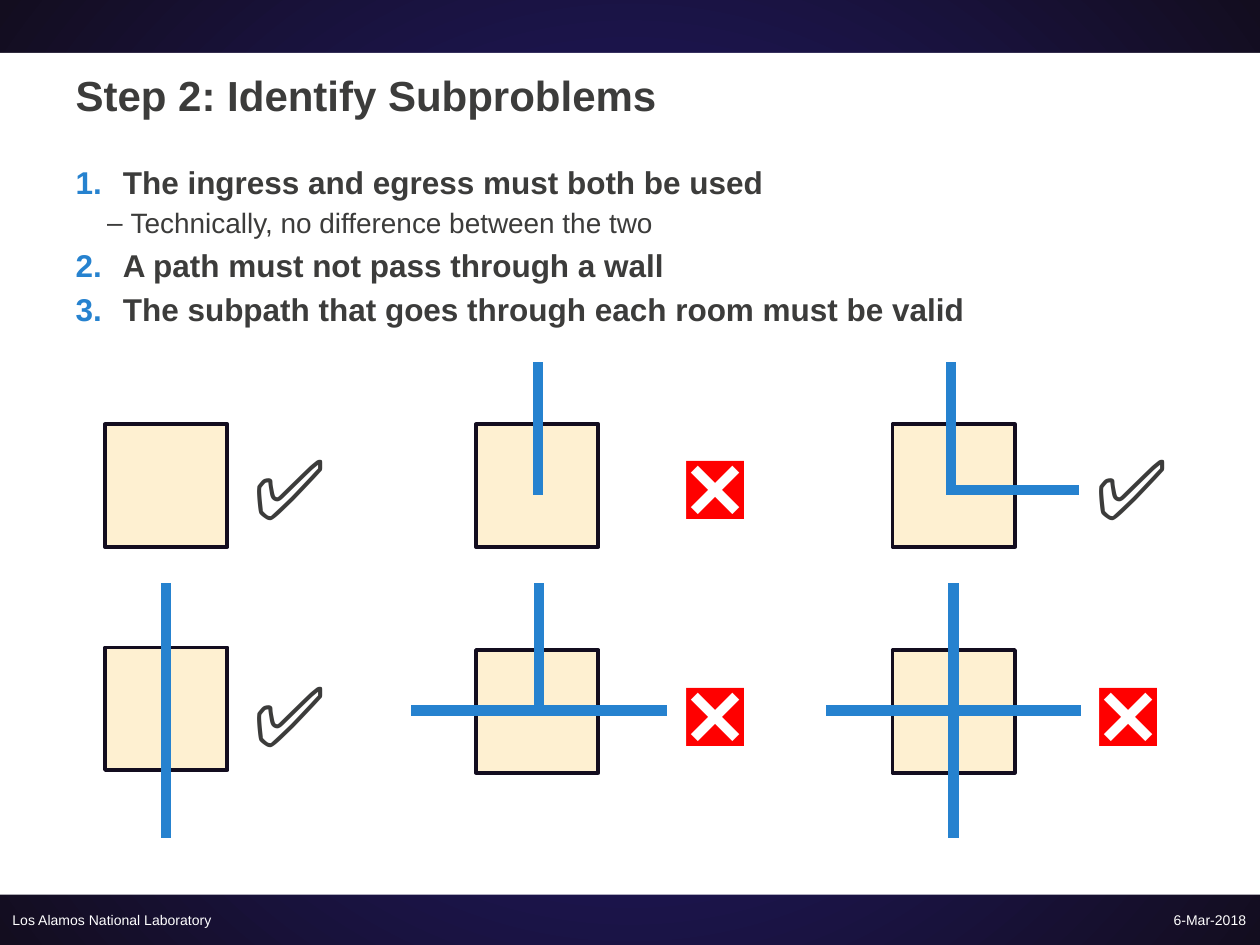
from dataclasses import dataclass
from enum import Enum

import pptx
import pptx.dml.color
import pptx.enum.shapes
import pptx.enum.text
import pptx.oxml
import pptx.oxml.ns
import pptx.util

Pt = pptx.util.Pt
RGBColor = pptx.dml.color.RGBColor
Align = pptx.enum.text.PP_ALIGN
Anchor = pptx.enum.text.MSO_ANCHOR
qn = pptx.oxml.ns.qn

WHITE = RGBColor(0xFF, 0xFF, 0xFF)
INK = RGBColor(0x3C, 0x3C, 0x3B)
BLUE = RGBColor(0x26, 0x82, 0xCF)
RED = RGBColor(0xFF, 0x00, 0x00)
CREAM = RGBColor(0xFE, 0xF0, 0xD1)
NIGHT = RGBColor(0x13, 0x0D, 0x1F)
INDIGO = RGBColor(0x25, 0x1D, 0x7D)

FONT = "Arial"
ROOM_SIZE = 70
ARM_LENGTH = 70


class Arm(Enum):
    UP = (0, -1)
    DOWN = (0, 1)
    LEFT = (-1, 0)
    RIGHT = (1, 0)


@dataclass
class Room:
    left: float
    top: float
    junction: tuple[float, float]
    arms: tuple[Arm, ...]
    mark: tuple[float, float]
    valid: bool


@dataclass
class Item:
    text: str
    level: int = 0


ROOMS = [
    Room(60, 242.5, (95, 280), (), (144.75, 249), True),
    Room(272, 242.5, (307.5, 280), (Arm.UP,), (390, 249), False),
    Room(510, 242.5, (543.5, 280), (Arm.UP, Arm.RIGHT), (625.75, 249), True),
    Room(60, 370, (95, 406), (Arm.UP, Arm.DOWN), (144.75, 378.75), True),
    Room(272, 371.5, (308, 406), (Arm.UP, Arm.LEFT, Arm.RIGHT), (390, 378.75), False),
    Room(510, 371.5, (545, 406), tuple(Arm), (625.75, 378.75), False),
]

ITEMS = [
    Item("The ingress and egress must both be used"),
    Item("Technically, no difference between the two", 1),
    Item("A path must not pass through a wall"),
    Item("The subpath that goes through each room must be valid"),
]


def set_font(font, size: float, color: RGBColor, bold: bool = False) -> None:
    font.name = FONT
    font.size = Pt(size)
    font.bold = bold
    font.color.rgb = color


def place(shape, left: float, top: float, width: float, height: float) -> None:
    shape.left, shape.top = Pt(left), Pt(top)
    shape.width, shape.height = Pt(width), Pt(height)


def set_background(slide) -> None:
    """Fill the slide with a circular gradient spreading from its centre."""
    fill = slide.background.fill
    fill.gradient()
    for stop, color in zip(fill.gradient_stops, (INDIGO, NIGHT)):
        stop.color.rgb = color
    linear = next(slide.background._cSld.iter(qn("a:lin")))
    circle = pptx.oxml.parse_xml(
        f'<a:path {pptx.oxml.ns.nsdecls("a")} path="circle">'
        '<a:fillToRect l="50000" t="50000" r="50000" b="50000"/></a:path>'
    )
    linear.getparent().replace(linear, circle)


def add_rectangle(slide, left: float, top: float, width: float, height: float,
                  color: RGBColor):
    shape = slide.shapes.add_shape(
        pptx.enum.shapes.MSO_SHAPE.RECTANGLE, Pt(left), Pt(top), Pt(width), Pt(height))
    shape.shadow.inherit = False
    shape.fill.solid()
    shape.fill.fore_color.rgb = color
    shape.line.fill.background()
    return shape


def add_title(slide, text: str) -> None:
    title = slide.shapes.title
    place(title, 36, 30.25, 648, 47.5)
    frame = title.text_frame
    frame.text = text
    frame.auto_size = pptx.enum.text.MSO_AUTO_SIZE.NONE
    frame.vertical_anchor = Anchor.MIDDLE
    frame.paragraphs[0].alignment = Align.LEFT
    set_font(frame.paragraphs[0].runs[0].font, 24, INK, True)


def add_bullet(paragraph, level: int) -> None:
    """Number the top level in blue and put a dash before the second."""
    margin, indent = ((27, -27), (31.5, -13.5))[level]
    properties = paragraph._p.get_or_add_pPr()
    properties.set("marL", str(Pt(margin)))
    properties.set("indent", str(Pt(indent)))
    if level == 0:
        color = pptx.oxml.ns.qn("a:buClr")
        properties.makeelement(color)
        bullet_color = properties.makeelement(color)
        bullet_color.append(properties.makeelement(qn("a:srgbClr"), {"val": str(BLUE)}))
        properties.append(bullet_color)
        bullet = properties.makeelement(qn("a:buAutoNum"), {"type": "arabicPeriod"})
    else:
        bullet = properties.makeelement(qn("a:buChar"), {"char": "–"})
    properties.append(bullet)


def add_list(slide, items: list[Item]) -> None:
    body = slide.placeholders[1]
    place(body, 36, 89.25, 648, 128.25)
    frame = body.text_frame
    frame.text = "\n".join(item.text for item in items)
    frame.auto_size = pptx.enum.text.MSO_AUTO_SIZE.NONE
    for index, (paragraph, item) in enumerate(zip(frame.paragraphs, items)):
        size = (18, 16)[item.level]
        paragraph.level = item.level
        paragraph.space_before = Pt(0.2 * size if index else 0)
        add_bullet(paragraph, item.level)
        for font in (paragraph.font, paragraph.runs[0].font):
            set_font(font, size, INK, item.level == 0)


def add_text(slide, text: str, left: float, top: float, width: float, height: float,
             size: float, color: RGBColor):
    box = slide.shapes.add_textbox(Pt(left), Pt(top), Pt(width), Pt(height))
    box.text_frame.text = text
    set_font(box.text_frame.paragraphs[0].runs[0].font, size, color)
    return box


def add_footer(slide, text: str, left: float, width: float, alignment: Align) -> None:
    frame = add_text(slide, text, left, 511.25, width, 28.75, 8, WHITE).text_frame
    frame.word_wrap = True
    frame.vertical_anchor = Anchor.MIDDLE
    frame.paragraphs[0].alignment = alignment


def add_arm(slide, junction: tuple[float, float], arm: Arm) -> None:
    x, y = junction
    across, down = arm.value
    line = slide.shapes.add_connector(
        pptx.enum.shapes.MSO_CONNECTOR.STRAIGHT, Pt(x), Pt(y),
        Pt(x + across * ARM_LENGTH), Pt(y + down * ARM_LENGTH))
    line.line.color.rgb = BLUE
    line.line.width = Pt(6)
    line.line._get_or_add_ln().set("cap", "sq")
    properties = line._element.spPr
    properties.append(properties.makeelement(qn("a:effectLst")))


def add_room(slide, room: Room) -> None:
    square = add_rectangle(slide, room.left, room.top, ROOM_SIZE, ROOM_SIZE, CREAM)
    square.line.color.rgb = NIGHT
    square.line.width = Pt(2.25)
    for arm in room.arms:
        add_arm(slide, room.junction, arm)
    symbol, color = ("✅", INK) if room.valid else ("❎", RED)
    frame = add_text(slide, symbol, *room.mark, 48, 58.25, 48, color).text_frame
    frame.margin_left = frame.margin_top = frame.margin_right = frame.margin_bottom = 0
    frame.word_wrap = False


def main() -> None:
    presentation = pptx.Presentation()
    presentation.slide_width, presentation.slide_height = Pt(720), Pt(540)
    slide = presentation.slides.add_slide(presentation.slide_layouts[1])
    set_background(slide)
    panel = add_rectangle(slide, 0, 30.25, 720, 481, WHITE)
    slide.shapes._spTree.insert(2, panel._element)
    add_title(slide, "Step 2: Identify Subproblems")
    add_list(slide, ITEMS)
    for room in ROOMS:
        add_room(slide, room)
    add_footer(slide, "Los Alamos National Laboratory", 0, 260.75, Align.LEFT)
    add_footer(slide, "6-Mar-2018", 551.5, 167.75, Align.RIGHT)
    presentation.save("out.pptx")


if __name__ == "__main__":
    main()
